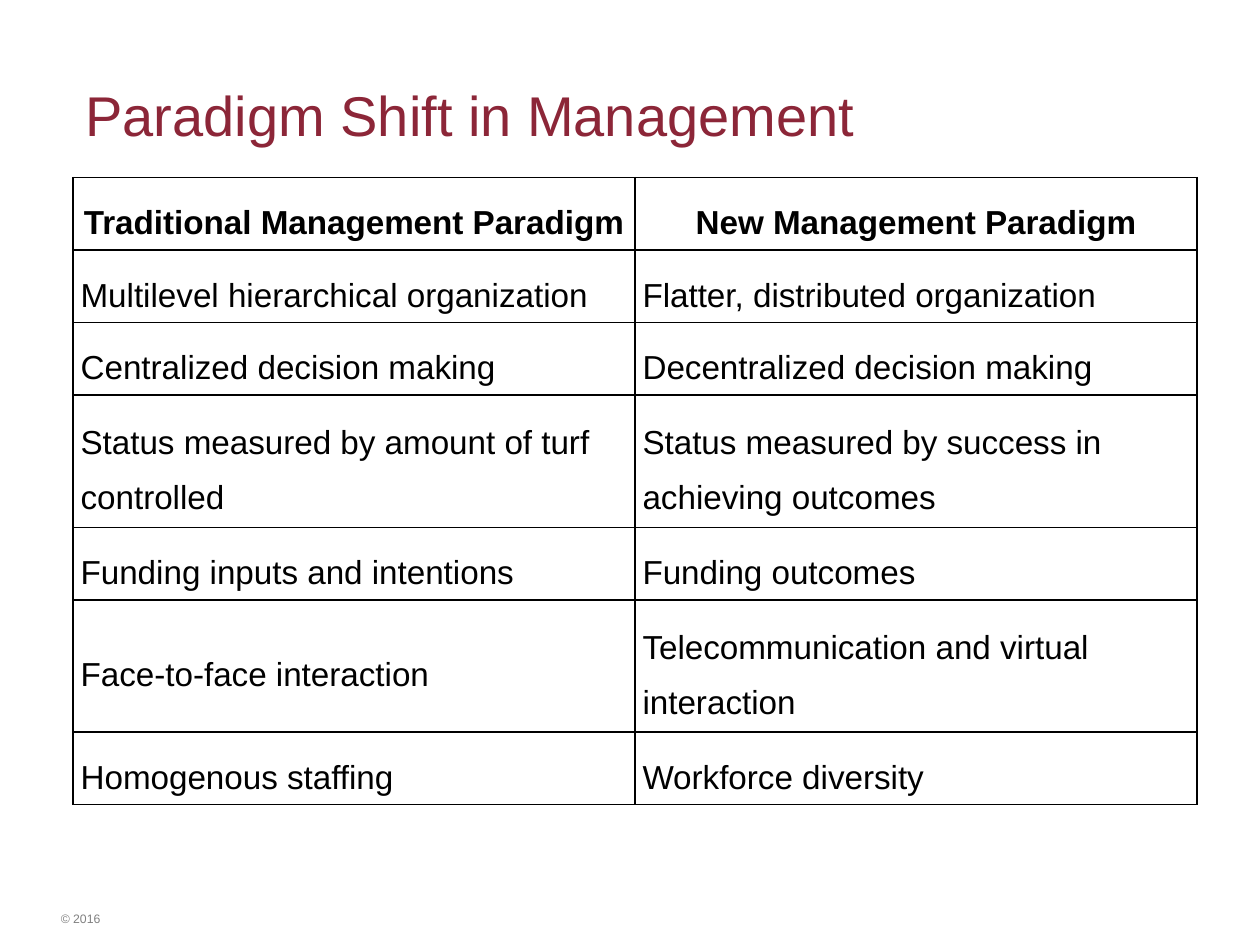
from lxml import etree
from pptx import Presentation
from pptx import util as u
from pptx.dml import color
from pptx.enum import text
from pptx.oxml import ns

COLORS = {"title": "8C2638", "body": "000000", "footer": "808080",
          "cell": "FFFFFF", "border": "000000"}


def write(frame, words, size, ink, align, bold=False):
    """Put one formatted paragraph in a text frame and return it."""
    paragraph = frame.paragraphs[0]
    paragraph.alignment = align
    run = paragraph.add_run()
    run.text = words
    formats = {"name": "Arial", "size": u.Pt(size), "bold": bold}
    for key, value in formats.items():
        setattr(run.font, key, value)
    run.font.color.rgb = color.RGBColor.from_string(COLORS[ink])
    return paragraph


def add_borders(cell):
    """Draw a 1 pt line on every side of a table cell."""
    properties = cell._tc.get_or_add_tcPr()
    for position, side in enumerate(("lnL", "lnR", "lnT", "lnB")):
        line = etree.Element(ns.qn("a:" + side), w=str(u.Pt(1)))
        fill = etree.SubElement(line, ns.qn("a:solidFill"))
        etree.SubElement(fill, ns.qn("a:srgbClr"), val=COLORS["border"])
        properties.insert(position, line)


deck = Presentation()
deck.slide_width, deck.slide_height = u.Inches(10), u.Inches(7.5)
slide = deck.slides.add_slide(deck.slide_layouts[6])

LEFT, CENTER = text.PP_ALIGN.LEFT, text.PP_ALIGN.CENTER

# Copyright line and title
for words, place, size, ink, align in (
    ("© 2016", (0.26, 7.18, 0.76, 0.22), 7, "footer", CENTER),
    ("Paradigm Shift in Management", (0.58, 0.59, 7.08, 0.64), 32, "title", LEFT),
):
    frame = slide.shapes.add_textbox(*map(u.Inches, place)).text_frame
    frame.word_wrap = True
    write(frame, words, size, ink, align)

# Comparison of the two paradigms
comparison = [
    ("Traditional Management Paradigm", "New Management Paradigm"),
    ("Multilevel hierarchical organization", "Flatter, distributed organization"),
    ("Centralized decision making", "Decentralized decision making"),
    ("Status measured by amount of turf controlled",
     "Status measured by success in achieving outcomes"),
    ("Funding inputs and intentions", "Funding outcomes"),
    ("Face-to-face interaction", "Telecommunication and virtual interaction"),
    ("Homogenous staffing", "Workforce diversity"),
]
ONE_LINE, TWO_LINES = 0.57, 1.05
two_line_rows = (3, 5)
cell_format = {
    "margin_left": u.Inches(0.06), "margin_right": u.Inches(0.06),
    "margin_top": u.Inches(0.05), "margin_bottom": u.Inches(0.05),
    "vertical_anchor": text.MSO_ANCHOR.MIDDLE,
}
paradigms = slide.shapes.add_table(
    len(comparison), 2, u.Inches(0.58), u.Inches(1.41),
    u.Inches(8.92), u.Inches(4.95)).table

for row, pair in enumerate(comparison):
    height = TWO_LINES if row in two_line_rows else ONE_LINE
    paradigms.rows[row].height = u.Inches(height)
    heading = row == 0
    for column, words in enumerate(pair):
        cell = paradigms.cell(row, column)
        for key, value in cell_format.items():
            setattr(cell, key, value)
        cell.fill.solid()
        cell.fill.fore_color.rgb = color.RGBColor.from_string(COLORS["cell"])
        add_borders(cell)
        paragraph = write(cell.text_frame, words, 19, "body",
                          CENTER if heading else LEFT, heading)
        paragraph.line_spacing = 1.5
        paragraph.space_after = u.Pt(6)

deck.save("out.pptx")
